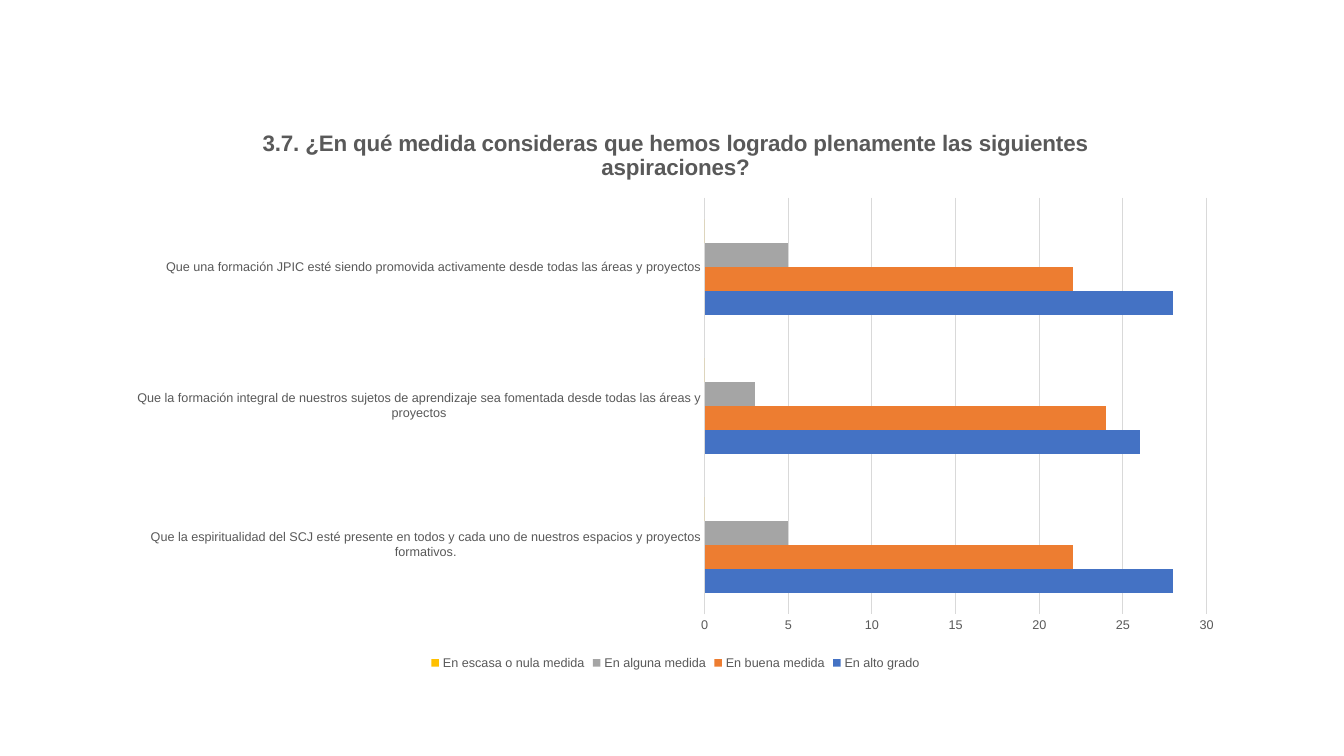
from pptx import Presentation
from pptx.chart.data import CategoryChartData
from pptx.dml.color import RGBColor
from pptx.enum.chart import XL_CHART_TYPE, XL_LEGEND_POSITION, XL_TICK_MARK
from pptx.util import Inches, Pt

FONT = "Arial"
TEXT_GREY = RGBColor(0x59, 0x59, 0x59)
LINE_GREY = RGBColor(0xD9, 0xD9, 0xD9)
BLUE = RGBColor(0x44, 0x72, 0xC4)
ORANGE = RGBColor(0xED, 0x7D, 0x31)
GREY = RGBColor(0xA5, 0xA5, 0xA5)
YELLOW = RGBColor(0xFF, 0xC0, 0x00)

TITLE = "3.7. ¿En qué medida consideras que hemos logrado plenamente las siguientes aspiraciones?"
ASPIRATIONS = [
    "Que la espiritualidad del SCJ esté presente en todos y cada uno de nuestros espacios y proyectos formativos.",
    "Que la formación integral de nuestros sujetos de aprendizaje sea fomentada desde todas las áreas y proyectos",
    "Que una formación JPIC esté siendo promovida activamente desde todas las áreas y proyectos",
]
RATINGS = [
    ("En alto grado", (28, 26, 28), BLUE),
    ("En buena medida", (22, 24, 22), ORANGE),
    ("En alguna medida", (5, 3, 5), GREY),
    ("En escasa o nula medida", (0, 0, 0), YELLOW),
]


def format_font(font, size=9, bold=False, color=TEXT_GREY):
    font.name = FONT
    font.size = Pt(size)
    font.bold = bold
    font.color.rgb = color


def write_text(text_frame, text, **font_format):
    run = text_frame.paragraphs[0].add_run()
    run.text = text
    format_font(run.font, **font_format)


def format_line(line):
    line.color.rgb = LINE_GREY
    line.width = Pt(0.75)


def add_ratings_chart(slide, left, top, width, height):
    data = CategoryChartData()
    data.categories = ASPIRATIONS
    for name, values, _ in RATINGS:
        data.add_series(name, values)
    chart = slide.shapes.add_chart(
        XL_CHART_TYPE.BAR_CLUSTERED, left, top, width, height, data).chart
    format_font(chart.font)
    write_text(chart.chart_title.text_frame, TITLE, size=16, bold=True)
    chart.chart_title.include_in_layout = False

    plot = chart.plots[0]
    plot.gap_width = 182
    plot.vary_by_categories = False
    for series, (_, _, color) in zip(plot.series, RATINGS):
        series.format.fill.solid()
        series.format.fill.fore_color.rgb = color
    return chart


def format_axes(chart):
    for axis in (chart.category_axis, chart.value_axis):
        axis.major_tick_mark = XL_TICK_MARK.NONE
        axis.minor_tick_mark = XL_TICK_MARK.NONE
        format_font(axis.tick_labels.font)
    format_line(chart.category_axis.format.line)
    chart.value_axis.format.line.fill.background()
    chart.value_axis.has_major_gridlines = True
    format_line(chart.value_axis.major_gridlines.format.line)


def add_bottom_legend(chart):
    chart.has_legend = True
    chart.legend.position = XL_LEGEND_POSITION.BOTTOM
    chart.legend.include_in_layout = False
    format_font(chart.legend.font)


def main():
    presentation = Presentation()
    presentation.slide_width = Inches(13.33)
    presentation.slide_height = Inches(7.5)
    slide = presentation.slides.add_slide(presentation.slide_layouts[6])
    chart = add_ratings_chart(
        slide, Inches(1.14), Inches(1.07), Inches(11.12), Inches(5.62))
    format_axes(chart)
    add_bottom_legend(chart)
    presentation.save("out.pptx")


if __name__ == "__main__":
    main()
